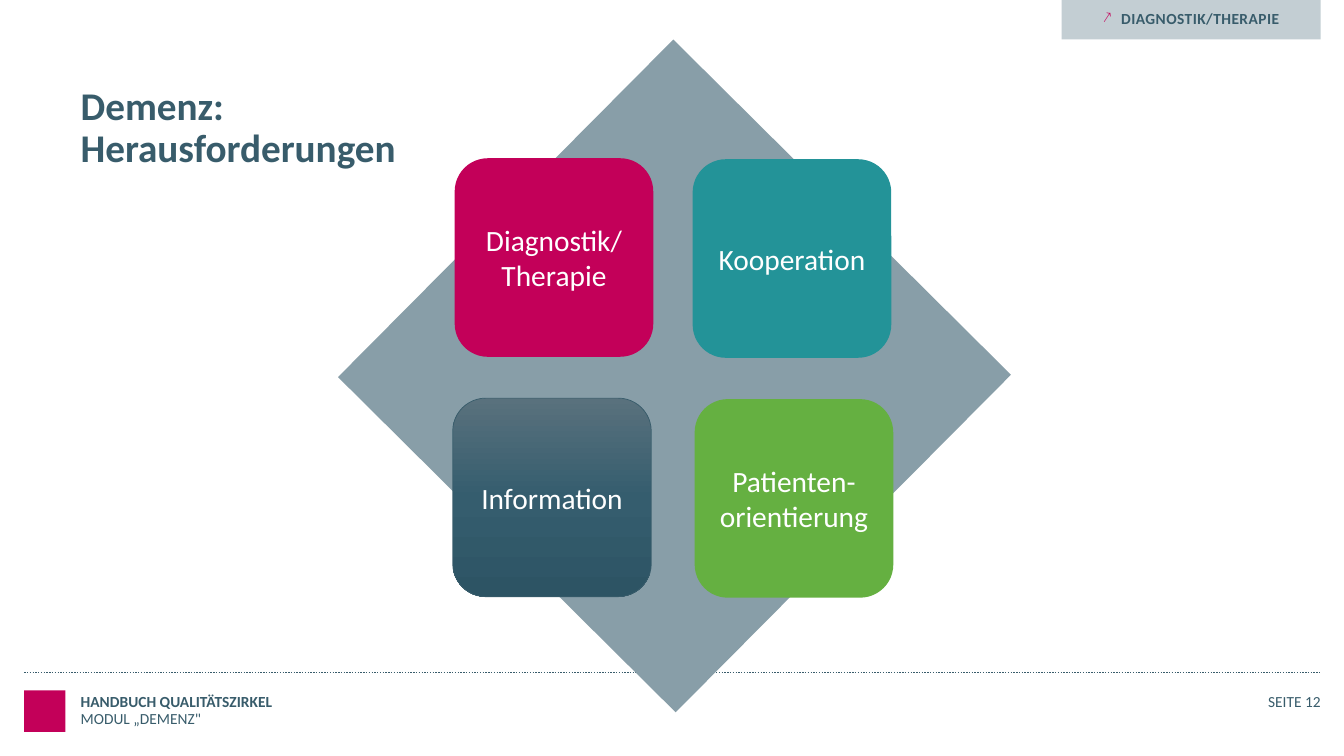
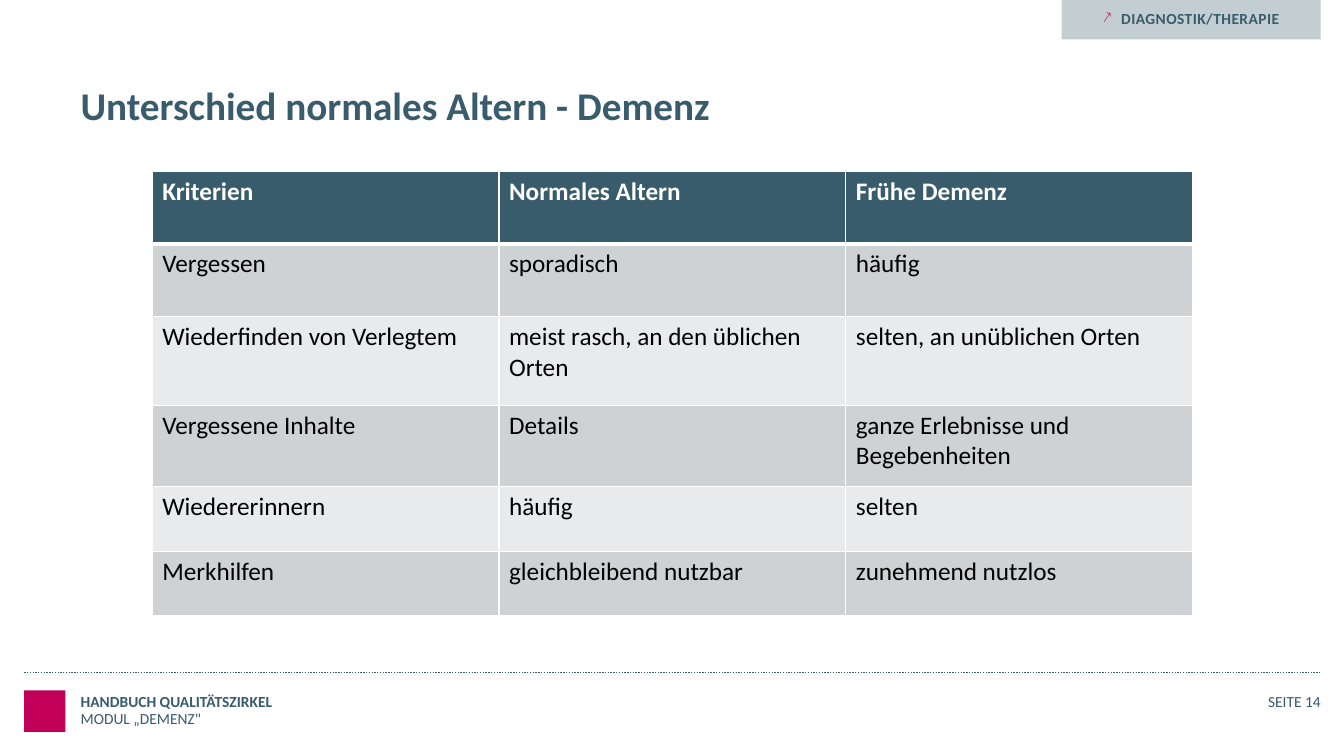
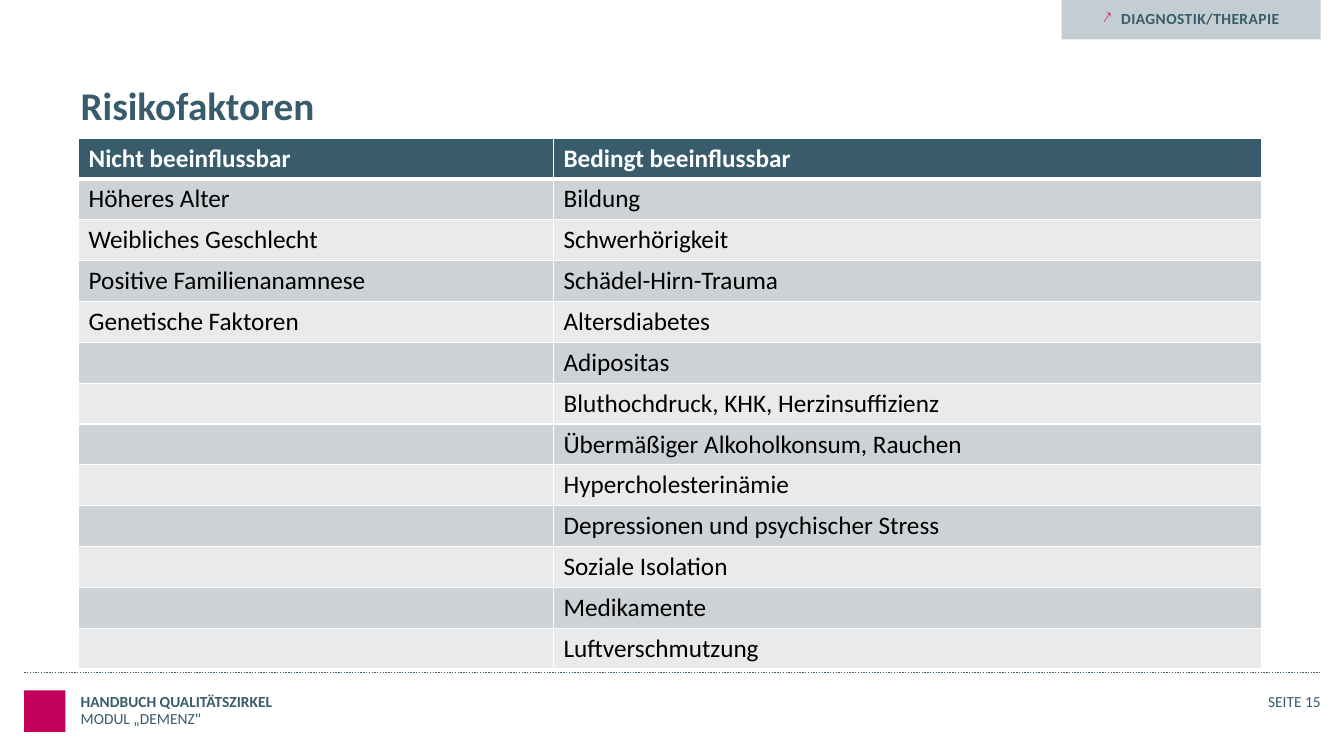
"""Build three slides of a quality circle handbook on dementia."""
from copy import deepcopy

from lxml import etree
from pptx import Presentation
from pptx import util as u
from pptx.dml.color import RGBColor
from pptx.enum import dml, shapes, text
from pptx.oxml import ns

PETROL = RGBColor(0x38, 0x5C, 0x6B)
MAGENTA = RGBColor(0xC3, 0x00, 0x59)
TEAL = RGBColor(0x23, 0x93, 0x98)
GREEN = RGBColor(0x65, 0xB0, 0x41)
SLATE = RGBColor(0x88, 0x9E, 0xA8)
TAG_GREY = RGBColor(0xC3, 0xCE, 0xD3)
BANDS = RGBColor(0xE8, 0xEA, 0xEB), RGBColor(0xCE, 0xD2, 0xD4)
BLUE_SHADES = (
    (0, RGBColor(0x59, 0x71, 0x7D)),
    (0.5, RGBColor(0x35, 0x5D, 0x6E)),
    (1, RGBColor(0x2D, 0x54, 0x64)),
)
WHITE = RGBColor(0xFF, 0xFF, 0xFF)
BLACK = RGBColor(0, 0, 0)
FONT = "Calibri"
LEFT, TOP_RULE, RIGHT = 0.24, 6.67, 13.1
TEXT_LEFT = 0.8
TILE = 1.97
NO_INSETS = (0, 0, 0, 0)


def add_element(parent, tag, **attributes):
    """Append a DrawingML element to its parent."""
    return etree.SubElement(parent, ns.qn(tag), attributes)


def write(frame, content, size=11, color=PETROL, bold=False, align=None,
          spacing=None, insets=None, anchor=None):
    """Put formatted text into a text frame and return its paragraph."""
    frame.word_wrap = True
    if insets is not None:
        (frame.margin_left, frame.margin_top,
         frame.margin_right, frame.margin_bottom) = map(u.Inches, insets)
    if anchor is not None:
        frame.vertical_anchor = anchor
    paragraph = frame.paragraphs[0]
    paragraph.text = content
    paragraph.alignment = align
    paragraph.line_spacing = spacing
    for run in paragraph.runs:
        run.font.name = FONT
        run.font.size = u.Pt(size)
        run.font.bold = bold
        run.font.color.rgb = color
    return paragraph


class Deck:
    """Hold the presentation, its style and the current slide."""

    def __init__(self):
        """Create an empty widescreen presentation."""
        self.presentation = Presentation()
        self.presentation.slide_width = u.Inches(13.33)
        self.presentation.slide_height = u.Inches(7.5)
        self.slide = None

    def add_slide(self, title, number):
        """Start a slide with title, chapter tag and footer."""
        layout = self.presentation.slide_layouts[6]
        self.slide = self.presentation.slides.add_slide(layout)
        self.shape(LEFT, 6.85, 0.41, 0.41, MAGENTA)
        self.rule()
        self.label(title, TEXT_LEFT, 0.86, 11.73, 0.47, size=28, bold=True,
                   spacing=0.89)
        self.tag("DIAGNOSTIK/THERAPIE")
        line = u.Pt(13)
        self.label("HANDBUCH QUALITÄTSZIRKEL", TEXT_LEFT, 6.87, 10.32, 0.18,
                   bold=True, spacing=line)
        self.label('MODUL „DEMENZ"', TEXT_LEFT, 7.04, 10.32, 0.18, spacing=line)
        self.label(f"SEITE {number}", RIGHT - 1.18, 6.87, 1.18, 0.18,
                   align=text.PP_ALIGN.RIGHT, spacing=line)

    def shape(self, left, top, width, height, color,
              kind=shapes.MSO_SHAPE.RECTANGLE):
        """Add a filled preset shape without outline."""
        shape = self.slide.shapes.add_shape(
            kind, *map(u.Inches, (left, top, width, height)))
        shape.shadow.inherit = False
        shape.fill.solid()
        shape.fill.fore_color.rgb = color
        shape.line.fill.background()
        return shape

    def label(self, content, left, top, width, height, **style):
        """Add a text box without insets."""
        box = self.slide.shapes.add_textbox(
            *map(u.Inches, (left, top, width, height)))
        write(box.text_frame, content, insets=NO_INSETS, **style)

    def rule(self):
        """Add the dotted line above the footer."""
        line = self.slide.shapes.add_connector(
            shapes.MSO_CONNECTOR.STRAIGHT,
            *map(u.Inches, (LEFT, TOP_RULE, RIGHT, TOP_RULE)))
        line.line.color.rgb = PETROL
        line.line.width = u.Pt(1)
        line.line.dash_style = dml.MSO_LINE.ROUND_DOT
        add_element(line._element.spPr, "a:effectLst")

    def tag(self, content):
        """Add the chapter tag with its arrow bullet."""
        shape = self.shape(RIGHT - 2.57, 0, 2.57, 0.39, TAG_GREY)
        paragraph = write(shape.text_frame, content, bold=True,
                          align=text.PP_ALIGN.RIGHT,
                          insets=(0.3, 0.09, 0.41, 0.11),
                          anchor=text.MSO_ANCHOR.TOP)
        paragraph.runs[0].font._element.set("spc", "30")
        properties = paragraph._p.get_or_add_pPr()
        indent = u.Inches(0.18)
        properties.set("marL", str(indent))
        properties.set("indent", str(-indent))
        bullet_color = add_element(properties, "a:buClr")
        add_element(bullet_color, "a:srgbClr", val=str(MAGENTA))
        add_element(properties, "a:buChar", char="↗")

    def tile(self, content, left, top, color):
        """Add a rounded tile with centred white text."""
        shape = self.shape(left, top, TILE, TILE, color,
                           shapes.MSO_SHAPE.ROUNDED_RECTANGLE)
        write(shape.text_frame, content, size=21, color=WHITE,
              align=text.PP_ALIGN.CENTER, anchor=text.MSO_ANCHOR.MIDDLE)
        return shape

    def shade(self, shape, stops):
        """Give a shape a top-down gradient and a thin outline."""
        shape.fill.gradient()
        shape.fill.gradient_angle = 270
        stop_list = shape._element.spPr.find(".//" + ns.qn("a:gsLst"))
        stop_list.append(deepcopy(stop_list[0]))
        for stop, (position, color) in zip(shape.fill.gradient_stops, stops):
            stop.position = position
            stop.color.rgb = color
        shape.line.color.rgb = PETROL
        shape.line.width = u.Pt(0.5)

    def borders(self, cell, row):
        """Draw white cell borders, thick below the header."""
        thick_side = {0: "B", 1: "T"}.get(row)
        properties = cell._tc.get_or_add_tcPr()
        for side in "LRTB":
            width = u.Pt(3 if side == thick_side else 1)
            line = add_element(properties, f"a:ln{side}", w=str(width))
            fill = add_element(line, "a:solidFill")
            add_element(fill, "a:srgbClr", val=str(WHITE))

    def table(self, rows, left, top, widths, heights):
        """Add a banded table with a dark header row."""
        table = self.slide.shapes.add_table(
            len(rows), len(widths),
            *map(u.Inches, (left, top, sum(widths), sum(heights)))).table
        table.first_row = table.horz_banding = False
        for column, width in zip(table.columns, widths):
            column.width = u.Inches(width)
        for index, (row, height) in enumerate(zip(rows, heights)):
            table.rows[index].height = u.Inches(height)
            header = index == 0
            for cell, content in zip(table.rows[index].cells, row):
                self.borders(cell, index)
                cell.fill.solid()
                cell.fill.fore_color.rgb = PETROL if header else BANDS[index % 2]
                write(cell.text_frame, content, size=18, bold=header,
                      color=WHITE if header else BLACK)


def main():
    """Build and save the slides."""
    deck = Deck()

    deck.add_slide("Demenz: \vHerausforderungen", 12)
    diamond = deck.shape(4.33, 1.37, 4.72, 4.72, SLATE)
    diamond.rotation = 44.8
    deck.tile("Patienten-orientierung", 6.89, 3.96, GREEN)
    information = deck.tile("Information", 4.49, 3.95, PETROL)
    deck.shade(information, BLUE_SHADES)
    deck.tile("Kooperation", 6.87, 1.58, TEAL)
    deck.tile("Diagnostik/ Therapie", 4.51, 1.57, MAGENTA)

    deck.add_slide("Unterschied normales Altern - Demenz", 14)
    criteria = [
        ("Kriterien", "Normales Altern", "Frühe Demenz"),
        ("Vergessen", "sporadisch", "häufig"),
        ("Wiederfinden von Verlegtem", "meist rasch, an den üblichen Orten",
         "selten, an unüblichen Orten"),
        ("Vergessene Inhalte", "Details", "ganze Erlebnisse und Begebenheiten"),
        ("Wiedererinnern", "häufig", "selten"),
        ("Merkhilfen", "gleichbleibend nutzbar", "zunehmend nutzlos"),
    ]
    deck.table(criteria, 1.51, 1.7, [3.44] * 3,
               [0.72, 0.72, 0.88, 0.81, 0.64, 0.64])

    deck.add_slide("Risikofaktoren", 15)
    risks = [
        ("Nicht beeinflussbar", "Bedingt beeinflussbar"),
        ("Höheres Alter", "Bildung"),
        ("Weibliches Geschlecht", "Schwerhörigkeit"),
        ("Positive Familienanamnese", "Schädel-Hirn-Trauma"),
        ("Genetische Faktoren", "Altersdiabetes"),
        ("", "Adipositas"),
        ("", "Bluthochdruck, KHK, Herzinsuffizienz"),
        ("", "Übermäßiger Alkoholkonsum, Rauchen"),
        ("", "Hypercholesterinämie"),
        ("", "Depressionen und psychischer Stress"),
        ("", "Soziale Isolation"),
        ("", "Medikamente"),
        ("", "Luftverschmutzung"),
    ]
    deck.table(risks, 0.78, 1.37, [4.71, 7.02], [5.27 / len(risks)] * len(risks))

    deck.presentation.save("out.pptx")


if __name__ == "__main__":
    main()
